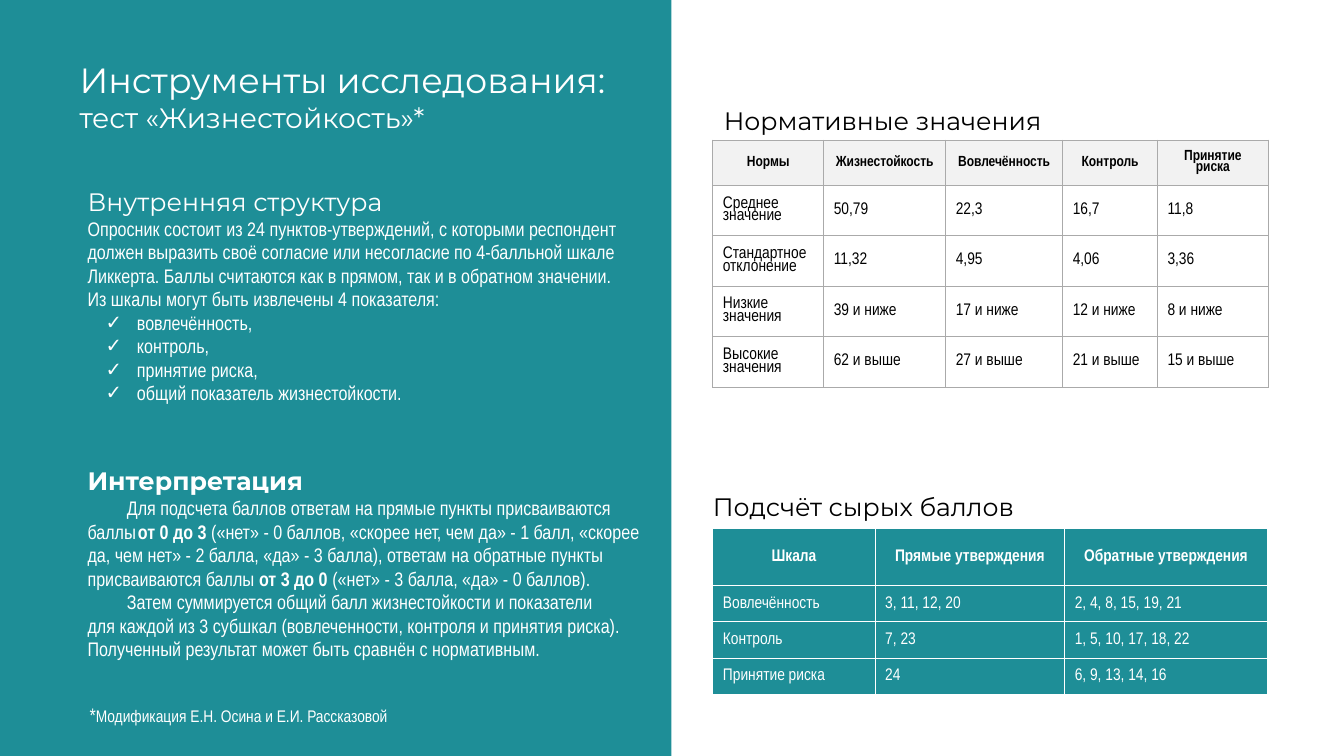
from dataclasses import dataclass
from typing import Optional

from lxml import etree
from pptx import Presentation
from pptx.dml.color import RGBColor
from pptx.enum import shapes, text
from pptx.oxml import ns
from pptx.util import Inches, Pt

TEAL = RGBColor(0x1E, 0x8E, 0x97)
WHITE = RGBColor(0xFF, 0xFF, 0xFF)
BLACK = RGBColor(0, 0, 0)
PALE_GREY = RGBColor(0xF2, 0xF2, 0xF2)
GRID_GREY = RGBColor(0xAA, 0xAA, 0xAA)
HEADING_FONT = "Montserrat"
BODY_FONT = "Arial Narrow"


@dataclass
class Span:
    text: str
    bold: Optional[bool] = None
    size: Optional[float] = None


@dataclass
class Para:
    spans: list[Span]
    size: float = 14
    font: str = BODY_FONT
    bold: bool = False
    left: float = 0
    indent: float = 0
    bullet: str = ""
    tab: float = 0


@dataclass
class TextBlock:
    at: tuple[float, float, float, float]
    paras: list[Para]
    color: RGBColor = WHITE
    middle: bool = True
    side_margin: float = 0.1


@dataclass
class Grid:
    left: float
    top: float
    columns: list[float]
    rows: list[float]
    values: list[list[str]]
    header_size: float
    header_fill: RGBColor
    body_fill: RGBColor
    color: RGBColor
    border: RGBColor
    line_spacing: float = 1.0


def heading(words: str, size: float = 18, bold: bool = False) -> Para:
    return Para([Span(words)], size, HEADING_FONT, bold)


def body(*spans: Span, **layout) -> Para:
    return Para(list(spans), **layout)


def check_item(words: str) -> Para:
    return body(Span(words), left=0.49, indent=-0.31, bullet="✓")


BLOCKS = [
    TextBlock((0.79, 6.92, 3.54, 0.34), [
        body(Span("*", size=14), Span("Модификация Е.Н. Осина и Е.И. Рассказовой"), size=12)]),
    TextBlock((0.77, 1.8, 5.73, 2.29), [
        heading("Внутренняя структура"),
        body(Span("Опросник состоит из 24 пунктов-утверждений, с которыми респондент должен "
                  "выразить своё согласие или несогласие по 4-балльной шкале Ликкерта. "
                  "Баллы считаются как в прямом, так и в обратном значении.")),
        body(Span("Из шкалы могут быть извлечены 4 показателя:")),
        *map(check_item, ["вовлечённость,", "контроль,", "принятие риска,",
                          "общий показатель жизнестойкости."])], middle=False),
    TextBlock((0.77, 4.57, 5.89, 2.05), [
        heading("Интерпретация", bold=True),
        body(Span("Для подсчета баллов ответам на прямые пункты присваиваются\nбаллы\t"),
             Span("от 0 до 3", bold=True),
             Span(" («нет» - 0 баллов, «скорее нет, чем да» - 1 балл, «скорее да, чем нет» - "
                  "2 балла, «да» - 3 балла), ответам на обратные пункты присваиваются баллы "),
             Span("от 3 до 0 ", bold=True),
             Span("(«нет» - 3 балла, «да» - 0 баллов)."), indent=0.39, tab=0.66),
        body(Span("Затем суммируется общий балл жизнестойкости и показатели\n"
                  "для каждой из 3 субшкал (вовлеченности, контроля и принятия риска). "
                  "Полученный результат может быть сравнён с нормативным."), indent=0.39)],
        middle=False),
    TextBlock((7.07, 4.84, 3.57, 0.36), [heading("Подсчёт сырых баллов")], BLACK, side_margin=0),
    TextBlock((7.08, 0.99, 4.71, 0.4), [heading("Нормативные значения")], BLACK),
    TextBlock((0.69, 0.53, 5.89, 0.86), [
        heading("Инструменты исследования:", 25), heading("тест «Жизнестойкость»*", 20)]),
]

RAW_SCORES = Grid(
    7.07, 5.24, [1.61, 1.88, 2.01], [0.57] + [0.36] * 3,
    [["Шкала", "Прямые утверждения", "Обратные утверждения"],
     ["Вовлечённость", "3, 11, 12, 20", "2, 4, 8, 15, 19, 21"],
     ["Контроль", "7, 23", "1, 5, 10, 17, 18, 22"],
     ["Принятие риска", "24", "6, 9, 13, 14, 16"]],
    12, TEAL, TEAL, WHITE, WHITE)

NORMS = Grid(
    7.07, 1.39, [1.1, 1.21, 1.16, 0.94, 1.1], [0.45] + [0.5] * 4,
    [["Нормы", "Жизнестойкость", "Вовлечённость", "Контроль", "Принятие риска"],
     ["Среднее значение", "50,79", "22,3", "16,7", "11,8"],
     ["Стандартное отклонение", "11,32", "4,95", "4,06", "3,36"],
     ["Низкие значения", "39 и ниже", "17 и ниже", "12 и ниже", "8 и ниже"],
     ["Высокие значения", "62 и выше", "27 и выше", "21 и выше", "15 и выше"]],
    10.5, PALE_GREY, WHITE, BLACK, GRID_GREY, 0.8)


def set_font(font, size: float, name: str, bold: bool, color: RGBColor) -> None:
    font.size, font.name, font.bold = Pt(size), name, bold
    font.color.rgb = color


def set_layout(paragraph, para: Para) -> None:
    """Apply indents, the bullet and the tab stop."""
    props = paragraph._p.get_or_add_pPr()
    props.set("marL", str(Inches(para.left)))
    props.set("indent", str(Inches(para.indent)))
    added = []
    if para.bullet:
        added.append(etree.Element(ns.qn("a:buFont"), typeface="Arial"))
        added.append(etree.Element(ns.qn("a:buChar"), char=para.bullet))
    if para.tab:
        stops = etree.Element(ns.qn("a:tabLst"))
        etree.SubElement(stops, ns.qn("a:tab"), pos=str(Inches(para.tab)), algn="l")
        added.append(stops)
    for position, element in enumerate(added):
        props.insert(position, element)


def add_spans(paragraph, para: Para, color: RGBColor) -> None:
    for span in para.spans:
        for number, line in enumerate(span.text.split("\n")):
            if number:
                paragraph.add_line_break()
            run = paragraph.add_run()
            run.text = line
            if span.bold is not None:
                run.font.bold = span.bold
            if span.size:
                run.font.size = Pt(span.size)
    set_font(paragraph.font, para.size, para.font, para.bold, color)


def add_block(slide, block: TextBlock) -> None:
    frame = slide.shapes.add_textbox(*map(Inches, block.at)).text_frame
    frame.word_wrap = True
    frame.auto_size = text.MSO_AUTO_SIZE.SHAPE_TO_FIT_TEXT
    frame.margin_left = frame.margin_right = Inches(block.side_margin)
    if block.middle:
        frame.vertical_anchor = text.MSO_ANCHOR.MIDDLE
    for number, para in enumerate(block.paras):
        paragraph = frame.add_paragraph() if number else frame.paragraphs[0]
        add_spans(paragraph, para, block.color)
        set_layout(paragraph, para)


def add_borders(cell, color: RGBColor) -> None:
    props = cell._tc.get_or_add_tcPr()
    for side in ("lnL", "lnR", "lnT", "lnB"):
        line = etree.SubElement(props, ns.qn(f"a:{side}"), w=str(Pt(0.75)))
        fill = etree.SubElement(line, ns.qn("a:solidFill"))
        etree.SubElement(fill, ns.qn("a:srgbClr"), val=str(color))


def add_grid(slide, grid: Grid) -> None:
    table = slide.shapes.add_table(
        len(grid.rows), len(grid.columns), Inches(grid.left), Inches(grid.top),
        Inches(sum(grid.columns)), Inches(sum(grid.rows))).table
    for column, width in zip(table.columns, grid.columns):
        column.width = Inches(width)
    for row_number, (row, height) in enumerate(zip(table.rows, grid.rows)):
        row.height = Inches(height)
        header = row_number == 0
        for cell, value in zip(row.cells, grid.values[row_number]):
            add_borders(cell, grid.border)
            cell.fill.solid()
            cell.fill.fore_color.rgb = grid.header_fill if header else grid.body_fill
            cell.vertical_anchor = text.MSO_ANCHOR.MIDDLE
            cell.text = value
            paragraph = cell.text_frame.paragraphs[0]
            paragraph.line_spacing = grid.line_spacing
            paragraph.alignment = text.PP_ALIGN.CENTER if header else text.PP_ALIGN.LEFT
            size = grid.header_size if header else 12
            set_font(paragraph.font, size, BODY_FONT, header, grid.color)


def main() -> None:
    deck = Presentation()
    deck.slide_width, deck.slide_height = Inches(13.33), Inches(7.5)
    slide = deck.slides.add_slide(deck.slide_layouts[6])
    panel = slide.shapes.add_shape(
        shapes.MSO_SHAPE.RECTANGLE, *map(Inches, (-0.04, -0.01, 6.7, 7.64)))
    panel.shadow.inherit = False
    panel.fill.solid()
    panel.fill.fore_color.rgb = TEAL
    panel.line.fill.background()
    for grid in (RAW_SCORES, NORMS):
        add_grid(slide, grid)
    for block in BLOCKS:
        add_block(slide, block)
    deck.save("out.pptx")


if __name__ == "__main__":
    main()
